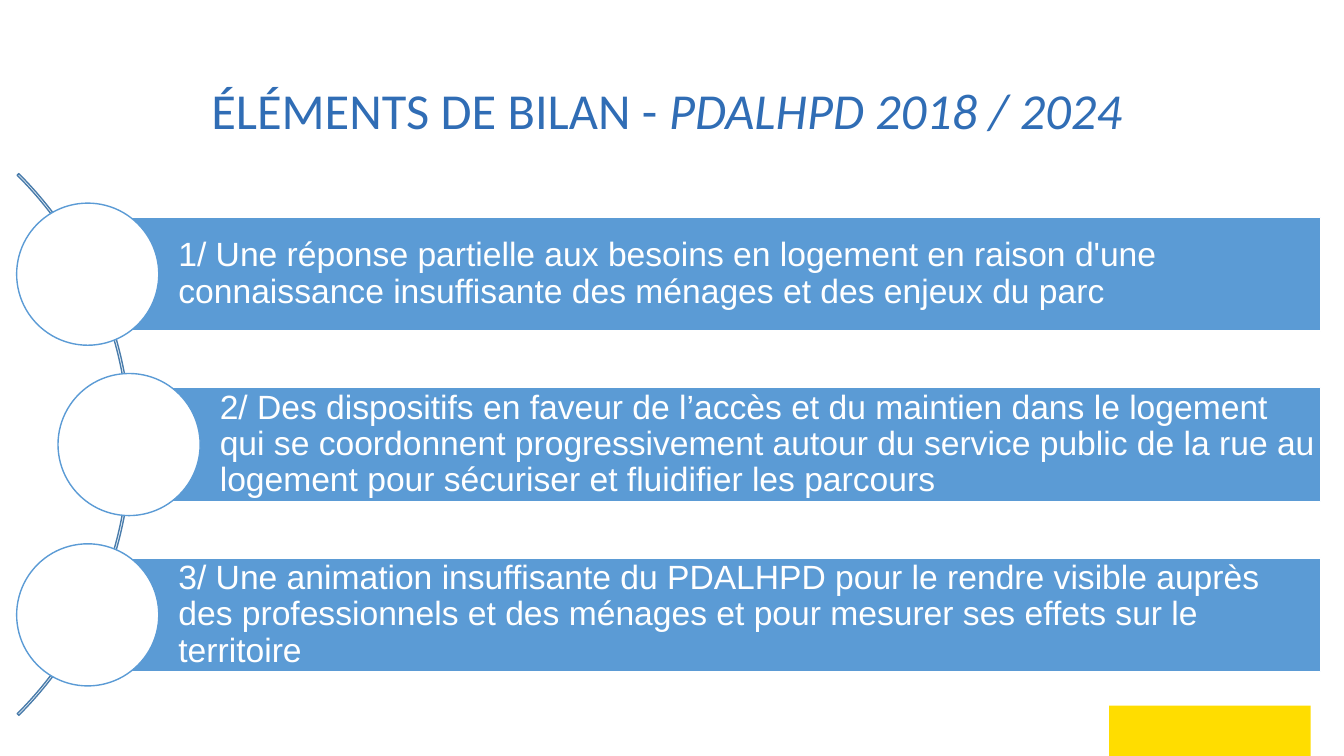
"""Build the slide on the PDALHPD 2018 / 2024 review."""
from pptx import Presentation, util as u
from pptx.dml.color import RGBColor
from pptx.enum import shapes, text

HUES = {"title": "306DB5", "bar": "5B9BD5", "arc": "497CAB",
        "white": "FFFFFF", "yellow": "FFDD00"}
WIDE, HIGH = 13.33, 7.5
MID, PITCH = 4.41, 1.69
BAR, DISC, EDGE = 1.13, 1.41, 13.1
ROWS = [
    (0.87, "1/ Une réponse partielle aux besoins en logement en raison d'une "
           "connaissance insuffisante des ménages et des enjeux du parc"),
    (1.28, "2/ Des dispositifs en faveur de l’accès et du maintien dans le logement "
           "qui se coordonnent progressivement autour du service public de la rue au "
           "logement pour sécuriser et fluidifier les parcours"),
    (0.87, "3/ Une animation insuffisante du PDALHPD pour le rendre visible auprès "
           "des professionnels et des ménages et pour mesurer ses effets sur le "
           "territoire"),
]


def paint(shape, fill, line):
    shape.shadow.inherit = False
    if fill:
        shape.fill.solid()
        shape.fill.fore_color.rgb = RGBColor.from_string(HUES[fill])
    else:
        shape.fill.background()
    if line:
        shape.line.color.rgb = RGBColor.from_string(HUES[line])
        shape.line.width = u.Pt(1)
    else:
        shape.line.fill.background()


def draw(kind, left, top, wide, high, fill, line):
    shape = slide.shapes.add_shape(kind, *map(u.Inches, (left, top, wide, high)))
    paint(shape, fill, line)
    return shape


deck = Presentation()
deck.slide_width, deck.slide_height = u.Inches(WIDE), u.Inches(HIGH)
slide = deck.slides.add_slide(deck.slide_layouts[5])

curve = [(11.4, 7.1), (11.39, 6.96), (11.5, 6.84), (11.64, 6.82)]
points = []
for step in range(13):
    t = step / 12
    parts = [(1 - t) ** 3, 3 * t * (1 - t) ** 2, 3 * t ** 2 * (1 - t), t ** 3]
    points.append([sum(w * p[axis] for w, p in zip(parts, curve)) for axis in (0, 1)])
points += [(WIDE, 6.68), (WIDE, HIGH), (11.43, HIGH)]
pen = slide.shapes.build_freeform(*points[0], scale=u.Inches(1))
pen.add_line_segments(points[1:], close=True)
paint(pen.convert_to_shape(), "yellow", None)

title = slide.shapes.title
title.left, title.top = u.Inches(0.92), u.Inches(0.4)
title.width, title.height = u.Inches(11.5), u.Inches(1.45)
title.text_frame.vertical_anchor = text.MSO_ANCHOR.MIDDLE
para = title.text_frame.paragraphs[0]
para.alignment = text.PP_ALIGN.CENTER
para.line_spacing = 0.9
for words, slant in (("ÉLÉMENTS DE BILAN - ", False), ("PDALHPD 2018 / 2024 ", True)):
    run = para.add_run()
    run.text = words
    run.font.italic = slant
para.font.size, para.font.name = u.Pt(36), "Calibri"
para.font.color.rgb = RGBColor.from_string(HUES["title"])

arc = draw(shapes.MSO_SHAPE.BLOCK_ARC, -6.3, MID - 3.8, 7.6, 7.6, None, "arc")
for spot, value in enumerate((189, 27, 0.003)):
    arc.adjustments[spot] = value

for row, (left, words) in enumerate(ROWS):
    mid = MID + (row - 1) * PITCH
    bar = draw(shapes.MSO_SHAPE.RECTANGLE, left, mid - BAR / 2, EDGE - left, BAR,
               "bar", "white")
    frame = bar.text_frame
    frame.word_wrap = True
    frame.vertical_anchor = text.MSO_ANCHOR.MIDDLE
    frame.margin_left = u.Inches(0.9)
    frame.margin_right = u.Inches(0.05)
    frame.margin_top = frame.margin_bottom = u.Inches(0.07)
    para = frame.paragraphs[0]
    para.text = words
    para.alignment = text.PP_ALIGN.LEFT
    para.line_spacing = 0.9
    para.font.size, para.font.name = u.Pt(24), "Arial"
    para.font.color.rgb = RGBColor.from_string(HUES["white"])
    draw(shapes.MSO_SHAPE.OVAL, left - DISC / 2, mid - DISC / 2, DISC, DISC,
         "white", "bar")

deck.save("out.pptx")
